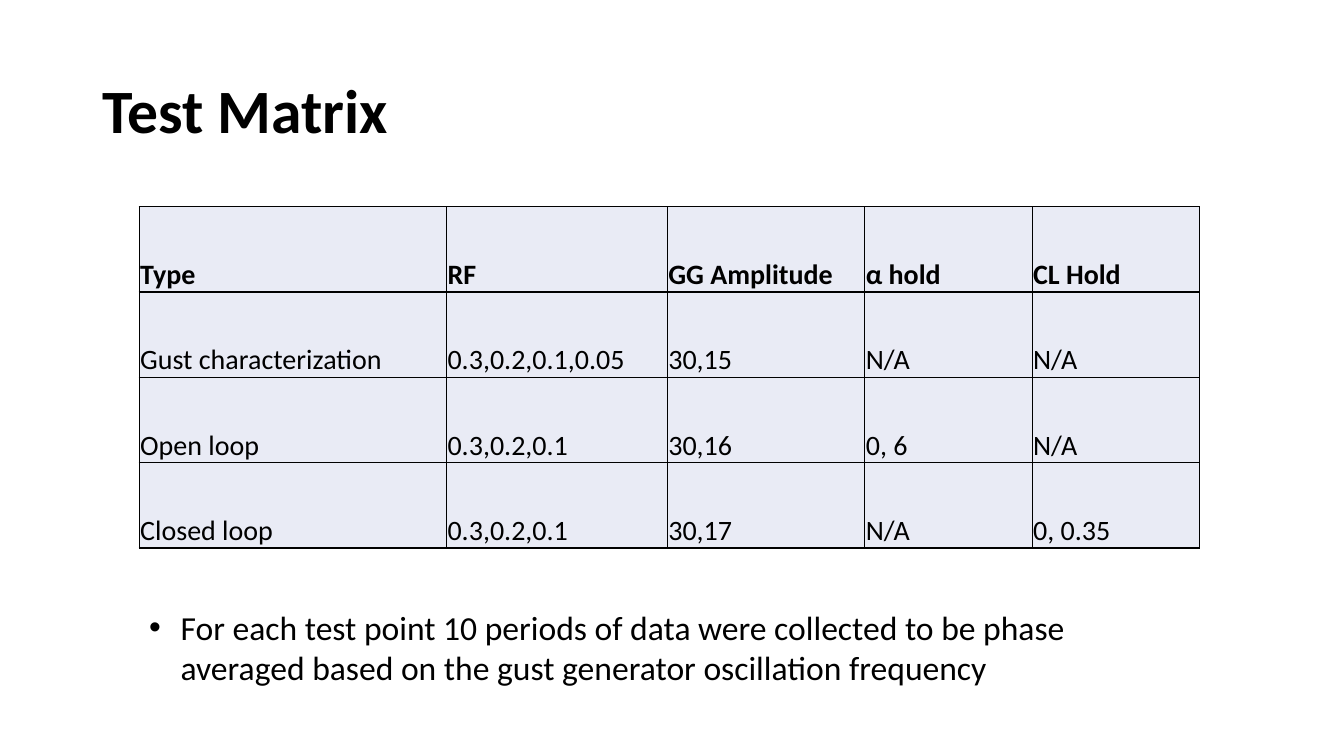
from dataclasses import dataclass

from lxml import etree
from pptx import Presentation
from pptx.dml.color import RGBColor
from pptx.enum.text import MSO_ANCHOR
from pptx.oxml.ns import qn
from pptx.util import Pt

TOP, MIDDLE, BOTTOM = MSO_ANCHOR.TOP, MSO_ANCHOR.MIDDLE, MSO_ANCHOR.BOTTOM


@dataclass(frozen=True)
class Theme:
    font: str = "Calibri"
    text: str = "000000"
    border: str = "000000"
    cell: str = "E9EBF5"
    title_size: float = 44
    note_size: float = 24
    table_size: float = 20
    border_width: float = 1


THEME = Theme()

COLUMN_WIDTHS = [219.6, 157.7, 141.1, 119.5, 119.5]
TEST_ROWS = [
    ["Type", "RF", "GG Amplitude", "α hold", "CL Hold"],
    ["Gust characterization", "0.3,0.2,0.1,0.05", "30,15", "N/A", "N/A"],
    ["Open loop", "0.3,0.2,0.1", "30,16", "0, 6", "N/A"],
    ["Closed loop", "0.3,0.2,0.1", "30,17", "N/A", "0, 0.35"],
]


def write_text(frame, text, size, bold=False, line_spacing=None, bullet_indent=None):
    """Fill the first paragraph of a text frame."""
    paragraph = frame.paragraphs[0]
    if bullet_indent:
        properties = paragraph._p.get_or_add_pPr()
        properties.set("marL", str(Pt(bullet_indent)))
        properties.set("indent", str(-Pt(bullet_indent)))
        etree.SubElement(properties, qn("a:buFont"), typeface="Arial")
        etree.SubElement(properties, qn("a:buChar"), char="•")
    if line_spacing:
        paragraph.line_spacing = line_spacing
    run = paragraph.add_run()
    run.text = text
    run.font.name = THEME.font
    run.font.size = Pt(size)
    run.font.bold = bold
    run.font.color.rgb = RGBColor.from_string(THEME.text)


def add_text_box(slide, box, text, size, anchor=TOP, **text_format):
    frame = slide.shapes.add_textbox(*map(Pt, box)).text_frame
    frame.word_wrap = True
    frame.vertical_anchor = anchor
    write_text(frame, text, size, **text_format)


def add_cell_borders(cell):
    """Draw all four sides; border elements come before the cell fill."""
    properties = cell._tc.get_or_add_tcPr()
    for position, side in enumerate(("a:lnL", "a:lnR", "a:lnT", "a:lnB")):
        line = etree.Element(qn(side), w=str(Pt(THEME.border_width)))
        fill = etree.SubElement(line, qn("a:solidFill"))
        etree.SubElement(fill, qn("a:srgbClr"), val=THEME.border)
        properties.insert(position, line)


def add_title(slide, box):
    add_text_box(slide, box, "Test Matrix", THEME.title_size, anchor=MIDDLE,
                 bold=True, line_spacing=0.9)


def add_test_table(slide, box):
    table = slide.shapes.add_table(
        len(TEST_ROWS), len(COLUMN_WIDTHS), *map(Pt, box)).table
    table.horz_banding = False
    for column, width in zip(table.columns, COLUMN_WIDTHS):
        column.width = Pt(width)
    for row_index, values in enumerate(TEST_ROWS):
        for column_index, value in enumerate(values):
            cell = table.cell(row_index, column_index)
            cell.margin_left = cell.margin_right = cell.margin_top = Pt(0.7)
            cell.margin_bottom = Pt(0)
            cell.vertical_anchor = BOTTOM
            cell.fill.solid()
            cell.fill.fore_color.rgb = RGBColor.from_string(THEME.cell)
            add_cell_borders(cell)
            write_text(cell.text_frame, value, THEME.table_size,
                       bold=row_index == 0)


def add_note(slide, box):
    add_text_box(slide, box,
                 "For each test point 10 periods of data were collected to be phase "
                 "averaged based on the gust generator oscillation frequency",
                 THEME.note_size, bullet_indent=22.5)


def main():
    presentation = Presentation()
    presentation.slide_width, presentation.slide_height = Pt(960), Pt(540)
    slide = presentation.slides.add_slide(presentation.slide_layouts[6])

    # Table and note share a left edge and width
    content_left, content_width = 99.4, sum(COLUMN_WIDTHS)
    add_test_table(slide, (content_left, 147.6, content_width, 244))
    add_title(slide, (66, 28.8, 828, 104.4))
    add_note(slide, (content_left, 429.8, content_width, 65.5))

    presentation.save("out.pptx")


if __name__ == "__main__":
    main()
